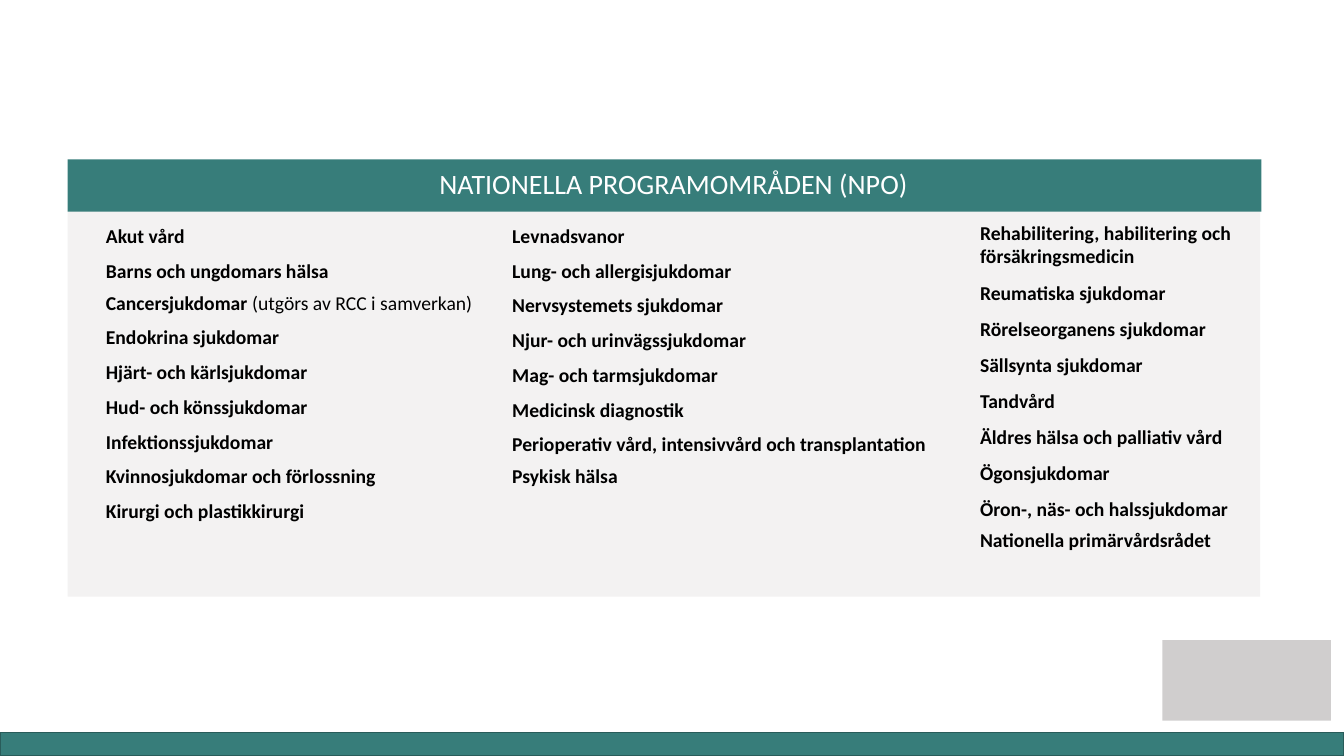
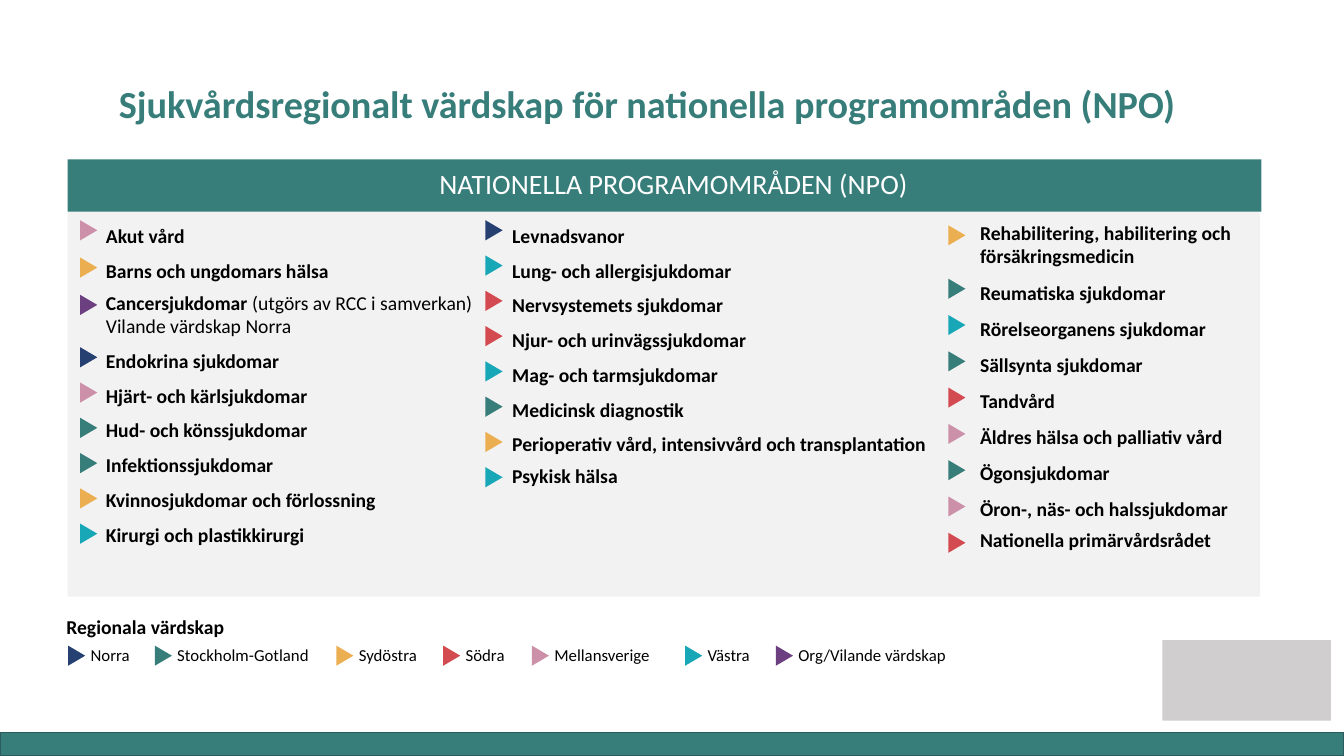
from dataclasses import dataclass

from lxml.etree import SubElement
from pptx import Presentation
from pptx.dml.color import RGBColor
from pptx.enum.shapes import MSO_SHAPE
from pptx.enum.text import MSO_ANCHOR, MSO_AUTO_SIZE, PP_ALIGN
from pptx.oxml.ns import qn
from pptx.util import Inches, Pt

TEAL = RGBColor(0x37, 0x7D, 0x7A)
DARK_TEAL = RGBColor(0x29, 0x5C, 0x5A)
GREY = RGBColor(0xD0, 0xCE, 0xCE)
BLACK = RGBColor(0, 0, 0)
WHITE = RGBColor(255, 255, 255)
NAVY = RGBColor(0x26, 0x41, 0x71)
AMBER = RGBColor(0xEB, 0xAE, 0x51)
RED = RGBColor(0xD3, 0x4B, 0x50)
PINK = RGBColor(0xCC, 0x91, 0xA9)
CYAN = RGBColor(0x18, 0xA7, 0xB7)
PURPLE = RGBColor(0x6C, 0x3F, 0x80)
FONT = "Calibri"
COMPARISON_LAYOUT = 4


@dataclass
class Area:
    """One list line: bold name, light note, and its spacing."""
    name: str
    note: str = ""
    exact: bool = True
    after: float = 0


def areas(*names):
    return [Area(name) for name in names]


EARLY_AREAS = [Area("Akut vård"), Area("Barns och ungdomars hälsa", after=6),
               Area("Cancersjukdomar ", "(utgörs av RCC i samverkan)", exact=False)]
DORMANT_HOST = [Area("", "Vilande värdskap Norra", exact=False)]
LATER_AREAS = areas("Endokrina sjukdomar", "Hjärt- och kärlsjukdomar",
                    "Hud- och könssjukdomar", "Infektionssjukdomar",
                    "Kvinnosjukdomar och förlossning", "Kirurgi och plastikkirurgi")
MIDDLE_AREAS = areas("Levnadsvanor", "Lung- och allergisjukdomar",
                     "Nervsystemets sjukdomar", "Njur- och urinvägssjukdomar",
                     "Mag- och tarmsjukdomar", "Medicinsk diagnostik") + [
    Area("Perioperativ vård, intensivvård och transplantation", after=6),
    Area("Psykisk hälsa", exact=False)]
LAST_AREAS = [Area("Rehabilitering, habilitering och försäkringsmedicin", exact=False)]
LAST_AREAS += areas("Reumatiska sjukdomar", "Rörelseorganens sjukdomar",
                    "Sällsynta sjukdomar", "Tandvård",
                    "Äldres hälsa och palliativ vård", "Ögonsjukdomar")
LAST_AREAS += [Area("Öron-, näs- och halssjukdomar", after=5.5),
               Area("Nationella primärvårdsrådet", exact=False)]

# Left, first top, step and host colours of each run of markers
HOST_MARKERS = [
    (0.78, 2.2, 0.37, [PINK, AMBER, PURPLE]),
    (0.78, 3.46, 0.35, [NAVY, PINK, TEAL, TEAL, AMBER, CYAN]),
    (4.8, 2.2, 0.35, [NAVY, CYAN, RED, RED, CYAN, TEAL, AMBER, CYAN]),
    (9.39, 2.25, 0.36, [AMBER]),
    (9.39, 2.78, 0.36, [TEAL, CYAN, TEAL, RED, PINK, TEAL, PINK, RED]),
]
LEGEND = [(0.66, "Norra", NAVY), (1.52, "Stockholm-Gotland", TEAL),
          (3.32, "Sydöstra", AMBER), (4.38, "Södra", RED),
          (5.26, "Mellansverige", PINK), (6.78, "Västra", CYAN),
          (7.68, "Org/Vilande värdskap", PURPLE)]
LEGEND_END = 9.6


class Deck:
    def __init__(self):
        self.deck = Presentation()
        self.deck.slide_width = Inches(13.33)
        self.deck.slide_height = Inches(7.5)
        self.page = None

    def new_page(self):
        self.page = self.deck.slides.add_slide(self.deck.slide_layouts[COMPARISON_LAYOUT])

    def place(self, shape, left, top, width, height):
        shape.left, shape.top = Inches(left), Inches(top)
        shape.width, shape.height = Inches(width), Inches(height)

    def span(self, para, text, size, color=BLACK, bold=False):
        span = para.add_run()
        span.text = text
        span.font.name = FONT
        span.font.size = Pt(size)
        span.font.bold = bold
        span.font.color.rgb = color

    def shape(self, kind, left, top, width, height, fill, line=None):
        shape = self.page.shapes.add_shape(
            kind, Inches(left), Inches(top), Inches(width), Inches(height))
        shape.shadow.inherit = False
        shape.fill.solid()
        shape.fill.fore_color.rgb = fill
        if line is None:
            shape.line.fill.background()
        else:
            shape.line.color.rgb = line
            shape.line.width = Pt(1)
        return shape

    def text(self, left, top, width, height, text, size, bold=False):
        box = self.page.shapes.add_textbox(
            Inches(left), Inches(top), Inches(width), Inches(height))
        frame = box.text_frame
        frame.word_wrap = True
        frame.margin_right = 0
        self.span(frame.paragraphs[0], text, size, bold=bold)

    def marker(self, left, top, color):
        shape = self.shape(MSO_SHAPE.ISOSCELES_TRIANGLE, left, top, 0.2, 0.17, color)
        shape.rotation = 90

    def title(self, text):
        title = self.page.shapes.title
        self.place(title, 1.08, 0.64, 11.43, 0.67)
        frame = title.text_frame
        frame.auto_size = MSO_AUTO_SIZE.NONE
        frame.vertical_anchor = MSO_ANCHOR.BOTTOM
        para = frame.paragraphs[0]
        para.alignment = PP_ALIGN.LEFT
        para.line_spacing = 0.9
        self.span(para, text, 27.3, TEAL, bold=True)

    def area_list(self, index, left, top, width, height, items, spacing):
        body = self.page.placeholders[index]
        self.place(body, left, top, width, height)
        frame = body.text_frame
        frame.auto_size = MSO_AUTO_SIZE.NONE
        frame.vertical_anchor = MSO_ANCHOR.TOP
        for number, item in enumerate(items):
            para = frame.add_paragraph() if number else frame.paragraphs[0]
            para.line_spacing = Pt(spacing) if item.exact else 1.0
            para.space_before = Pt(0)
            para.space_after = Pt(item.after)
            properties = para._p.get_or_add_pPr()
            properties.set("marL", "0")
            properties.set("indent", "0")
            SubElement(properties, qn("a:buNone"))
            if item.name:
                self.span(para, item.name, 14, bold=True)
            if item.note:
                self.span(para, item.note, 14)

    def programme_panel(self, first_column):
        panel = self.shape(MSO_SHAPE.RECTANGLE, 0.67, 2.09, 11.83, 3.83, GREY)
        color = panel._element.spPr.find(qn("a:solidFill"))[0]
        SubElement(color, qn("a:alpha")).set("val", "25000")
        self.page.shapes._spTree.insert(2, panel._element)  # behind the lists
        band = self.shape(MSO_SHAPE.RECTANGLE, 0.67, 1.58, 11.84, 0.52, TEAL)
        band.text_frame.margin_left = Inches(0.28)
        band.text_frame.margin_bottom = Inches(0.1)
        para = band.text_frame.paragraphs[0]
        para.alignment = PP_ALIGN.CENTER
        self.span(para, "NATIONELLA PROGRAMOMRÅDEN (NPO)", 20, WHITE)
        self.area_list(1, 0.95, 2.06, 3.92, 3.81, first_column, 24.8)
        self.area_list(2, 4.98, 2.06, 4.35, 3.41, MIDDLE_AREAS, 24.8)
        self.area_list(3, 9.62, 2.14, 2.88, 3.7, LAST_AREAS, 25.8)

    def legend(self):
        self.text(0.56, 6.05, 4, 0.34, "Regionala värdskap", 14, bold=True)
        ends = [left for left, _, _ in LEGEND[1:]] + [LEGEND_END]
        for (left, name, color), end in zip(LEGEND, ends):
            self.marker(left, 6.42, color)
            label = left + 0.14
            self.text(label, 6.35, end - label, 0.3, name, 12)

    def master_footer(self):
        """Draw the footer on the page, then move it to the slide master."""
        parts = [
            self.shape(MSO_SHAPE.RECTANGLE, 0, 7.27, 13.33, 0.23, TEAL, DARK_TEAL),
            self.shape(MSO_SHAPE.RECTANGLE, 11.53, 6.35, 1.67, 0.8, GREY),
        ]
        tree = self.deck.slide_master.shapes._spTree
        for number, part in enumerate(parts, 101):
            part._element.xpath(".//p:cNvPr")[0].set("id", str(number))
            tree.append(part._element)

    def remove_empty_placeholders(self):
        for holder in list(self.page.placeholders):
            if not holder.text_frame.text:
                holder._element.getparent().remove(holder._element)


def main():
    deck = Deck()
    deck.new_page()
    deck.master_footer()
    deck.programme_panel(EARLY_AREAS + LATER_AREAS)
    deck.remove_empty_placeholders()

    deck.new_page()
    deck.title("Sjukvårdsregionalt värdskap för nationella programområden (NPO)")
    deck.programme_panel(EARLY_AREAS + DORMANT_HOST + LATER_AREAS)
    for left, top, step, hosts in HOST_MARKERS:
        for number, color in enumerate(hosts):
            deck.marker(left, top + number * step, color)
    deck.legend()
    deck.remove_empty_placeholders()
    deck.deck.save("out.pptx")


if __name__ == "__main__":
    main()
